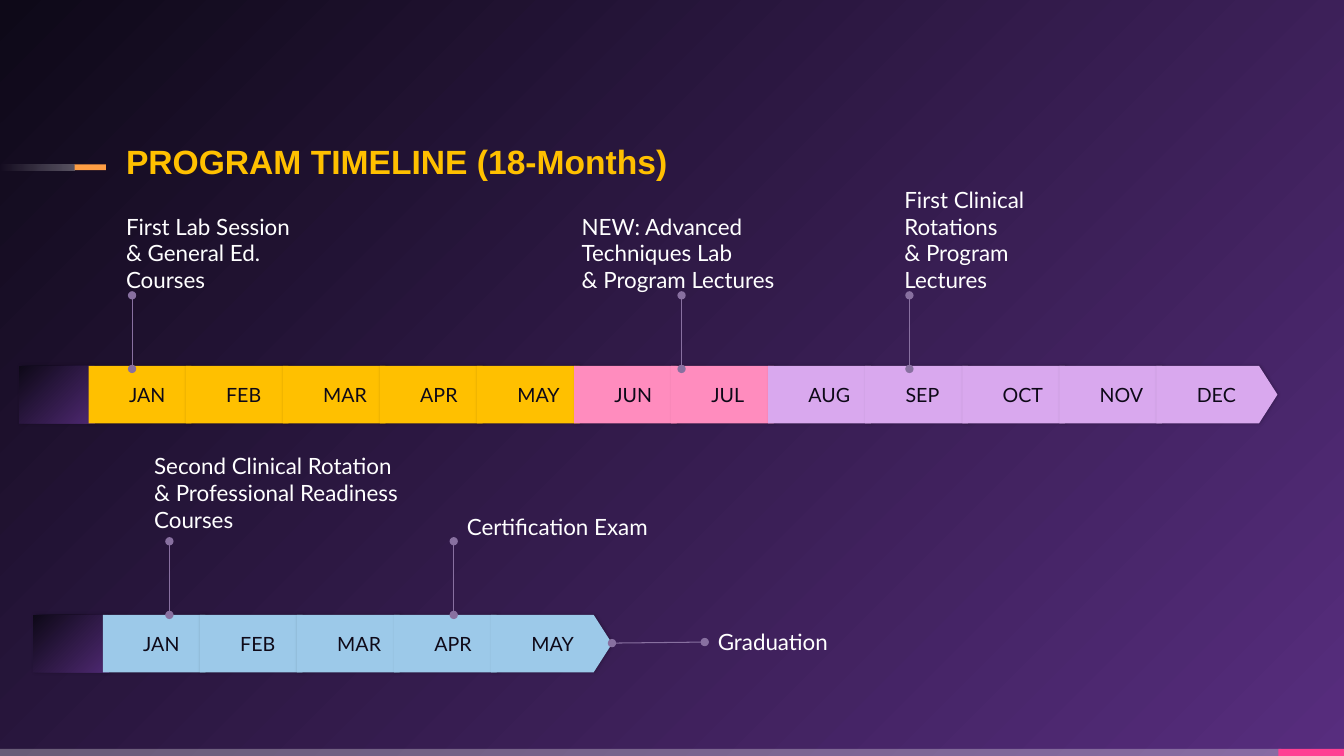
from dataclasses import dataclass

from lxml import etree
from pptx import Presentation
from pptx.dml.color import RGBColor
from pptx.enum.shapes import MSO_CONNECTOR, MSO_SHAPE
from pptx.enum.text import MSO_ANCHOR, MSO_AUTO_SIZE, PP_ALIGN
from pptx.oxml import parse_xml
from pptx.oxml.ns import nsdecls, qn
from pptx.util import Inches, Pt

RECTANGLE = MSO_SHAPE.RECTANGLE
PENTAGON = MSO_SHAPE.PENTAGON
STRAIGHT = MSO_CONNECTOR.STRAIGHT
TOP, MIDDLE, BOTTOM = MSO_ANCHOR.TOP, MSO_ANCHOR.MIDDLE, MSO_ANCHOR.BOTTOM
LEFT = PP_ALIGN.LEFT
NO_AUTOFIT = MSO_AUTO_SIZE.NONE
TITLE_ONLY = 5


@dataclass(frozen=True)
class Theme:
    title_font: str = "Arial"
    body_font: str = "Lato"
    title_size: int = 24
    label_size: int = 16
    month_size: int = 14
    dark: str = "0E0918"
    purple: str = "572D7E"
    white: str = "FFFFFF"
    gold: str = "FFC000"
    rose: str = "FF8CBE"
    lilac: str = "D9A8EE"
    sky: str = "9CC9E9"
    pink: str = "FF4093"
    orange: str = "FF9E44"
    pin: str = "8870A0"


class TimelineSlide:
    def __init__(self, page, theme):
        self.page = page
        self.theme = theme

    def background(self):
        theme = self.theme
        fill = parse_xml(
            f'<p:bg {nsdecls("p", "a")}><p:bgPr><a:gradFill><a:gsLst>'
            f'<a:gs pos="0"><a:srgbClr val="{theme.purple}"/></a:gs>'
            f'<a:gs pos="100000"><a:srgbClr val="{theme.dark}"/></a:gs></a:gsLst>'
            '<a:path path="circle"><a:fillToRect l="100000" t="100000"/></a:path>'
            '</a:gradFill><a:effectLst/></p:bgPr></p:bg>'
        )
        self.page.element.find(qn("p:cSld")).insert(0, fill)

    def set_text(self, frame, text, size, color, font, anchor, margins, bold=False):
        frame.text = text
        frame.word_wrap = True
        frame.auto_size = NO_AUTOFIT
        frame.vertical_anchor = anchor
        frame.margin_left, frame.margin_top, frame.margin_right, frame.margin_bottom = map(
            Inches, margins
        )
        for para in frame.paragraphs:
            para.alignment = LEFT
            for span in para.runs:
                span.font.size = Pt(size)
                span.font.name = font
                span.font.bold = bold
                span.font.color.rgb = RGBColor.from_string(color)

    def title(self, text, left, top, width, height):
        theme = self.theme
        box = self.page.shapes.title
        box.left, box.top, box.width, box.height = map(Inches, (left, top, width, height))
        self.set_text(box.text_frame, text, theme.title_size, theme.gold, theme.title_font,
                      BOTTOM, (0, 0, 0, 0), bold=True)

    def block(self, kind, place, colors, angle=0, alphas=()):
        box = self.page.shapes.add_shape(kind, *map(Inches, place))
        box.shadow.inherit = False
        box.line.fill.background()
        if len(colors) == 1:
            box.fill.solid()
            box.fill.fore_color.rgb = RGBColor.from_string(colors[0])
        else:
            box.fill.gradient()
            box.fill.gradient_angle = angle
            for stop, color in zip(box.fill.gradient_stops, colors):
                stop.color.rgb = RGBColor.from_string(color)
        for color, alpha in zip(box.element.spPr.iter(qn("a:srgbClr")), alphas):
            etree.SubElement(color, qn("a:alpha"), val=str(alpha * 1000))
        return box

    def segment(self, left, top, width, colors, month=""):
        theme = self.theme
        box = self.block(PENTAGON, (left, top, width, 0.57), colors, angle=315)
        box.adjustments[0] = 0.32
        effects = box.element.spPr.find(qn("a:effectLst"))
        effects.append(parse_xml(
            f'<a:outerShdw {nsdecls("a")} blurRad="{Pt(2.2)}" dist="{Pt(0.8)}" dir="0">'
            '<a:srgbClr val="000000"><a:alpha val="20000"/></a:srgbClr></a:outerShdw>'
        ))
        if month:
            self.set_text(box.text_frame, month, theme.month_size, theme.dark,
                          theme.body_font, MIDDLE, (0.4, 0, 0, 0))

    def month_bar(self, left, top, months):
        self.segment(left - 0.69, top, 0.93, (self.theme.dark, self.theme.purple))
        step = 10.59 / 11
        for index, (month, color) in enumerate(months):
            self.segment(left + index * step, top, 1.2, (color,), month)

    def label(self, text, place, anchor=BOTTOM, margin=0):
        theme = self.theme
        box = self.page.shapes.add_textbox(*map(Inches, place))
        self.set_text(box.text_frame, text, theme.label_size, theme.white,
                      theme.body_font, anchor, (margin,) * 4)

    def pin(self, *ends):
        line = self.page.shapes.add_connector(STRAIGHT, *map(Inches, ends))
        line.line.color.rgb = RGBColor.from_string(self.theme.pin)
        line.line.width = Pt(0.75)
        properties = line.element.spPr
        outline = properties.find(qn("a:ln"))
        for tag in ("a:headEnd", "a:tailEnd"):
            etree.SubElement(outline, qn(tag), type="oval")
        etree.SubElement(properties, qn("a:effectLst"))


def main():
    theme = Theme()
    deck = Presentation()
    deck.slide_width, deck.slide_height = Inches(13.33), Inches(7.5)
    slide = TimelineSlide(deck.slides.add_slide(deck.slide_layouts[TITLE_ONLY]), theme)

    slide.background()
    slide.block(RECTANGLE, (0, 7.43, 12.71, 0.07), (theme.white,), alphas=(30,))
    slide.block(RECTANGLE, (12.68, 7.43, 0.65, 0.07), (theme.pink,))
    slide.block(RECTANGLE, (0, 1.63, 0.74, 0.06), (theme.white, theme.white),
                angle=180, alphas=(30, 0))
    slide.block(RECTANGLE, (0.74, 1.63, 0.31, 0.06), (theme.orange,))
    slide.title("PROGRAM TIMELINE (18-Months)", 1.25, 1.22, 7.74, 0.58)

    months = "JAN FEB MAR APR MAY JUN JUL AUG SEP OCT NOV DEC".split()
    first_year_colors = [theme.gold] * 5 + [theme.rose] * 2 + [theme.lilac] * 5
    slide.month_bar(0.88, 3.63, zip(months, first_year_colors))
    slide.month_bar(1.02, 6.1, zip(months, [theme.sky] * 5))

    for x, bottom in ((1.31, 3.66), (6.76, 3.66), (9.02, 3.66), (1.68, 6.1), (4.5, 6.1)):
        slide.pin(x, bottom, x, bottom - 0.73)
    slide.pin(6.07, 6.38, 6.99, 6.37)

    for text, place in (
        ("First Lab Session & General Ed. Courses", (1.25, 2.13, 1.82, 0.78)),
        ("NEW: Advanced Techniques Lab\n& Program Lectures", (5.77, 2.13, 2.44, 0.78)),
        ("First Clinical Rotations\n& Program Lectures", (8.97, 1.8, 1.82, 1.11)),
        ("Second Clinical Rotation\n& Professional Readiness Courses", (1.53, 4.51, 2.44, 0.78)),
    ):
        slide.label(text, place)
    slide.label("Certification Exam", (4.5, 4.96, 2.52, 0.54), TOP, 0.13)
    slide.label("Graduation", (6.99, 6.1, 1.6, 0.54), TOP, 0.13)

    deck.save("out.pptx")


if __name__ == "__main__":
    main()
